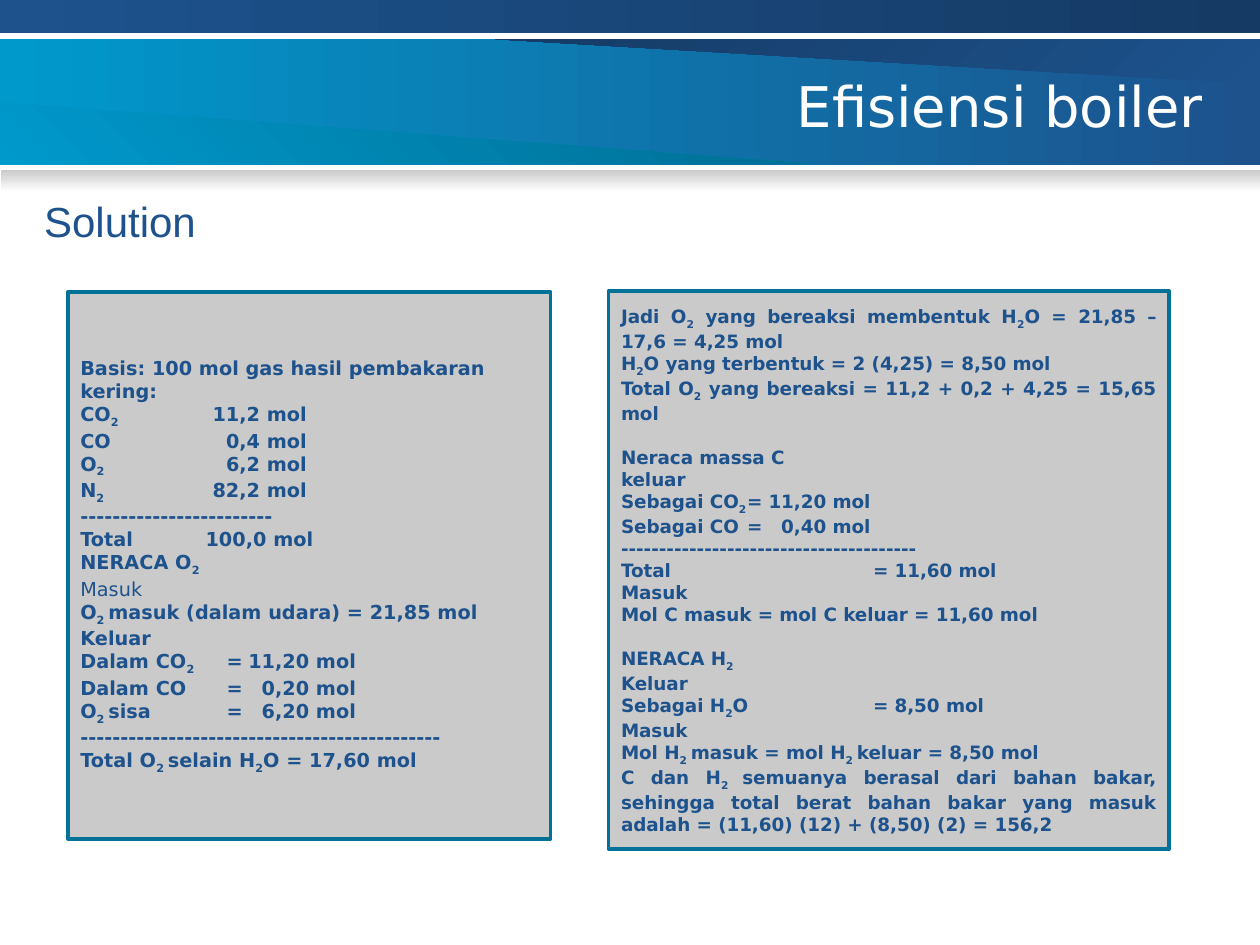
from lxml import etree
from pptx import Presentation
from pptx.dml.color import RGBColor
from pptx.enum import shapes, text
from pptx.oxml.ns import qn
from pptx.util import Cm, Pt

NAVY, DEEP, CYAN, TEAL, GREY, WHITE = (
    "1D528D", "153B65", "0099CC", "006D92", "CACACA", "FFFFFF")
LEFT, RIGHT, JUSTIFY = (
    text.PP_ALIGN.LEFT, text.PP_ALIGN.RIGHT, text.PP_ALIGN.JUSTIFY)

# Corner points in cm, gradient colours, clockwise angle
BANDS = [
    ([(0, 0.79), (25.43, 0.79), (25.43, 3.33), (0, 3.33)], CYAN, NAVY, 0),
    ([(9.98, 0.79), (25.4, 1.7), (25.4, 0.79)], NAVY, DEEP, 225),
    ([(0, 2.06), (16.33, 3.3), (0, 3.3)], CYAN, TEAL, 315),
    ([(0, 0), (25.4, 0), (25.4, 0.66), (0, 0.66)], NAVY, DEEP, 0),
    ([(0.03, 3.43), (25.4, 3.43), (25.4, 3.86), (0.03, 3.86)], GREY, WHITE, 90),
]

# Tab stops: position in cm and alignment
AMOUNT = [(4.57, "r")]
SUM = [(4.7, "r")]
OUTPUT = [(2.95, "l"), (5.56, "r")]
CARBON = [(2.54, "l"), (5.03, "r")]
RESULT = [(5.08, "l")]

# Text between underscores is subscript; options follow each line
GAS_BALANCE = [
    ("Basis: 100 mol gas hasil pembakaran kering:", {}),
    ("CO_2_\t11,2 mol", {"tabs": AMOUNT}),
    ("CO\t0,4 mol", {"tabs": AMOUNT}),
    ("O_2_\t6,2 mol", {"tabs": AMOUNT}),
    ("N_2_\t82,2 mol", {"tabs": AMOUNT}),
    ("-" * 24, {}),
    ("Total\t100,0 mol", {"tabs": SUM}),
    ("NERACA O_2_", {}),
    ("Masuk", {"bold": False}),
    ("O_2 _masuk (dalam udara) = 21,85 mol", {}),
    ("Keluar", {}),
    ("Dalam CO_2_\t=\t11,20 mol", {"tabs": OUTPUT}),
    ("Dalam CO\t=\t0,20 mol", {"tabs": OUTPUT}),
    ("O_2 _sisa\t=\t6,20 mol", {"tabs": OUTPUT}),
    ("-" * 45, {}),
    ("Total O_2 _selain H_2_O = 17,60 mol", {}),
]
FUEL_BALANCE = [
    ("Jadi O_2_ yang bereaksi membentuk H_2_O = 21,85 – 17,6 = 4,25 mol",
     {"align": JUSTIFY}),
    ("H_2_O yang terbentuk = 2 (4,25) = 8,50 mol", {"align": JUSTIFY}),
    ("Total O_2_ yang bereaksi = 11,2 + 0,2 + 4,25 = 15,65 mol",
     {"align": JUSTIFY}),
    ("Neraca massa C", {"before": 12.5}),
    ("keluar", {}),
    ("Sebagai CO_2_\t=\t11,20 mol", {"tabs": CARBON}),
    ("Sebagai CO\t=\t0,40 mol", {"tabs": CARBON}),
    ("-" * 39, {}),
    ("Total\t= 11,60 mol", {"tabs": RESULT}),
    ("Masuk", {}),
    ("Mol C masuk = mol C keluar = 11,60 mol", {}),
    ("NERACA H_2_", {"align": JUSTIFY, "before": 12.5}),
    ("Keluar", {"align": JUSTIFY}),
    ("Sebagai H_2_O\t= 8,50 mol", {"align": JUSTIFY, "tabs": RESULT}),
    ("Masuk", {"align": JUSTIFY}),
    ("Mol H_2 _masuk = mol H_2 _keluar = 8,50 mol", {"align": JUSTIFY}),
    ("C dan H_2 _semuanya berasal dari bahan bakar, sehingga total berat "
     "bahan bakar yang masuk adalah = (11,60) (12) + (8,50) (2) = 156,2",
     {"align": JUSTIFY}),
]
PANELS = [
    ((1.37, 5.89, 9.73, 11.02), 11, GAS_BALANCE),
    ((12.27, 5.87, 11.3, 11.25), 10.5, FUEL_BALANCE),
]


def rgb(value):
    return RGBColor.from_string(value)


def add_band(slide, points, start, end, angle):
    if len(points) == 4:
        (x, y), (right, bottom) = points[0], points[2]
        shape = slide.shapes.add_shape(
            shapes.MSO_SHAPE.RECTANGLE, Cm(x), Cm(y), Cm(right - x), Cm(bottom - y))
    else:
        corners = [(Cm(x), Cm(y)) for x, y in points]
        builder = slide.shapes.build_freeform(*corners[0])
        builder.add_line_segments(corners[1:], close=True)
        shape = builder.convert_to_shape()
    shape.shadow.inherit = False
    shape.line.fill.background()
    shape.fill.gradient()
    shape.fill.gradient_angle = (360 - angle) % 360
    for stop, color, position in zip(shape.fill.gradient_stops, (start, end), (0, 1)):
        stop.color.rgb = rgb(color)
        stop.position = position


def add_run(paragraph, words, size, font, color, bold=False, subscript=False):
    run = paragraph.add_run()
    run.text = words
    run.font.size = Pt(size)
    run.font.name = font
    run.font.bold = bold
    run.font.color.rgb = rgb(color)
    if subscript:
        run.font._element.set("baseline", "-25000")


def add_label(slide, box, words, size, font, color, align):
    frame = slide.shapes.add_textbox(*map(Cm, box)).text_frame
    frame.word_wrap = True
    frame.vertical_anchor = text.MSO_ANCHOR.MIDDLE
    frame.paragraphs[0].alignment = align
    add_run(frame.paragraphs[0], words, size, font, color)


def write_line(paragraph, line, size, align=LEFT, tabs=(), before=0, bold=True):
    paragraph.alignment = align
    if before:
        paragraph.space_before = Pt(before)
    if tabs:
        tab_list = etree.SubElement(paragraph._p.get_or_add_pPr(), qn("a:tabLst"))
        for position, side in tabs:
            etree.SubElement(tab_list, qn("a:tab"), pos=str(Cm(position)), algn=side)
    for index, words in enumerate(line.split("_")):
        if words:
            add_run(paragraph, words, size, "DejaVu Sans", NAVY, bold, index % 2 == 1)


def add_panel(slide, box, size, lines):
    shape = slide.shapes.add_shape(shapes.MSO_SHAPE.RECTANGLE, *map(Cm, box))
    shape.shadow.inherit = False
    shape.fill.solid()
    shape.fill.fore_color.rgb = rgb(GREY)
    shape.line.color.rgb = rgb("007197")
    shape.line.width = Pt(2)
    frame = shape.text_frame
    frame.word_wrap = True
    frame.vertical_anchor = text.MSO_ANCHOR.MIDDLE
    for index, (line, options) in enumerate(lines):
        paragraph = frame.add_paragraph() if index else frame.paragraphs[0]
        write_line(paragraph, line, size, **options)


def main():
    presentation = Presentation()
    presentation.slide_width, presentation.slide_height = Cm(25.4), Cm(19.05)
    slide = presentation.slides.add_slide(presentation.slide_layouts[6])
    for band in BANDS:
        add_band(slide, *band)
    add_label(slide, (3.3, 1.12, 21.21, 2.01), "Efisiensi boiler", 32,
              "DejaVu Sans", WHITE, RIGHT)
    add_label(slide, (0.64, 3.81, 3.61, 1.27), "Solution", 24, "Arial", NAVY, LEFT)
    for panel in PANELS:
        add_panel(slide, *panel)
    presentation.save("out.pptx")


if __name__ == "__main__":
    main()
